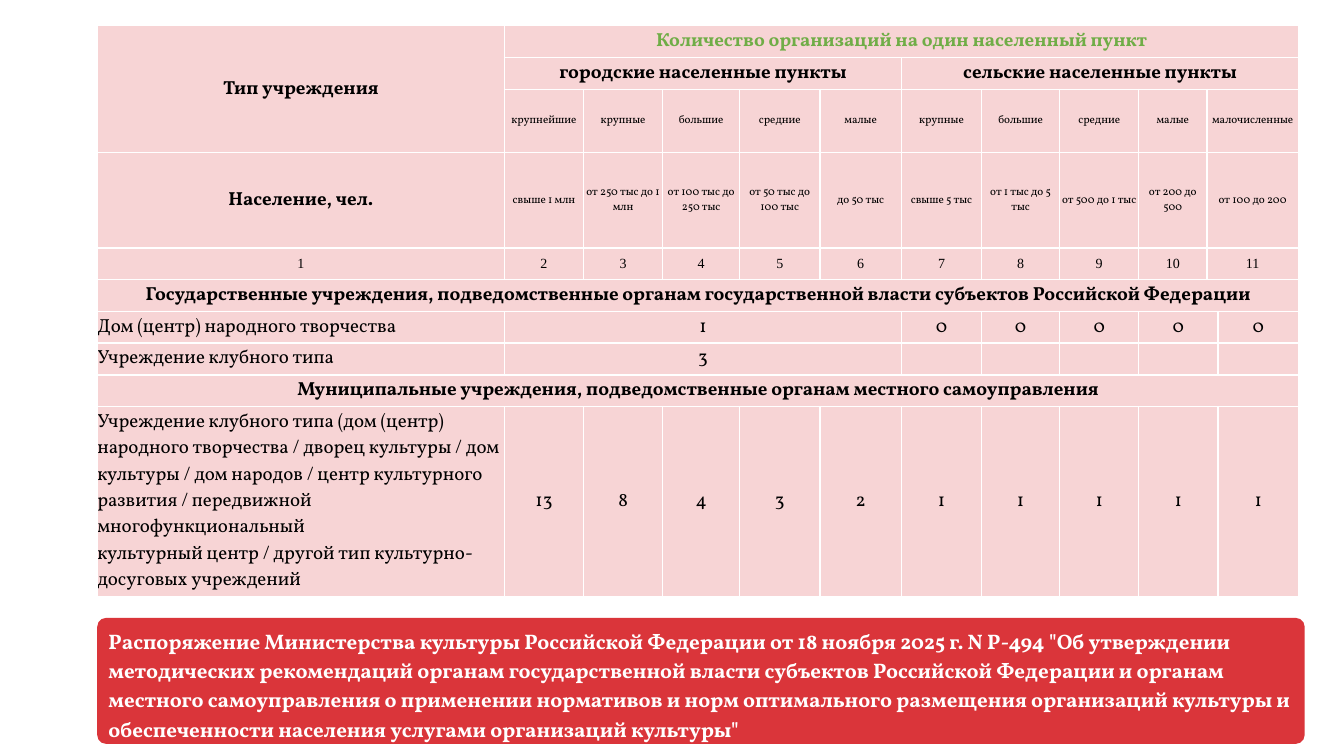
from collections import namedtuple

from lxml import etree
from pptx import Presentation
from pptx import util as u
from pptx.dml.color import RGBColor
from pptx.enum import shapes, text
from pptx.oxml import ns

PX = 9144
WHITE = RGBColor(0xFF, 0xFF, 0xFF)
BLACK = RGBColor(0x00, 0x00, 0x00)
PINK = RGBColor(0xF7, 0xD4, 0xD5)
RED = RGBColor(0xDA, 0x35, 0x3A)
GREEN = RGBColor(0x70, 0xAD, 0x47)
SERIF = "Vollkorn"

Style = namedtuple("Style", "size bold font color align")
CENTER, LEFT = text.PP_ALIGN.CENTER, text.PP_ALIGN.LEFT
HEADING = Style(27, True, SERIF, BLACK, CENTER)
ACCENT = HEADING._replace(color=GREEN)
SMALL = Style(16, False, SERIF, BLACK, CENTER)
NUMBER = Style(20, False, "Times New Roman", BLACK, CENTER)
VALUE = Style(27, False, SERIF, BLACK, CENTER)
LABEL = VALUE._replace(align=LEFT)
NOTE = Style(30, True, SERIF, WHITE, LEFT)

COLUMNS = [808, 157, 157, 153, 159, 162, 159, 155, 157, 135, 22, 160]
SINGLE = [1] * 10 + [2]
SPLIT = [1] * 9 + [2, 1]
GROUPED = [1, 5, 1, 1, 1, 2, 1]
Row = namedtuple("Row", "height lead style spans cells")
ROWS = [
    Row(63, HEADING, ACCENT, [1, 11],
        ["Тип учреждения", "Количество организаций на один населенный пункт"]),
    Row(63, HEADING, HEADING, [1, 5, 6],
        ["", "городские населенные пункты", "сельские населенные пункты"]),
    Row(126, HEADING, SMALL, SINGLE,
        ["", "крупнейшие", "крупные", "большие", "средние", "малые",
         "крупные", "большие", "средние", "малые", "малочисленные"]),
    Row(189, HEADING, SMALL, SINGLE,
        ["Население, чел.", "свыше 1 млн", "от 250 тыс до 1 млн",
         "от 100 тыс до 250 тыс", "от 50 тыс до 100 тыс", "до 50 тыс",
         "свыше 5 тыс", "от 1 тыс до 5 тыс", "от 500 до 1 тыс",
         "от 200 до 500", "от 100 до 200"]),
    Row(63, NUMBER, NUMBER, SINGLE, [str(number) for number in range(1, 12)]),
    Row(63, HEADING, HEADING, [12],
        ["Государственные учреждения, подведомственные органам "
         "государственной власти субъектов Российской Федерации"]),
    Row(63, LABEL, VALUE, GROUPED,
        ["Дом (центр) народного творчества", "1", "0", "0", "0", "0", "0"]),
    Row(63, LABEL, VALUE, GROUPED,
        ["Учреждение клубного типа", "3", "", "", "", "", ""]),
    Row(63, HEADING, HEADING, [12],
        ["Муниципальные учреждения, подведомственные органам местного "
         "самоуправления"]),
    Row(377, LABEL, VALUE, SPLIT,
        ["Учреждение клубного типа (дом (центр) народного творчества / дворец "
         "культуры / дом культуры / дом народов / центр культурного развития / "
         "передвижной многофункциональный\n"
         "культурный центр / другой тип культурно-досуговых учреждений",
         "13", "8", "4", "3", "2", "1", "1", "1", "1", "1"]),
]
DECREE = (
    "Распоряжение Министерства культуры Российской Федерации от 18 ноября "
    "2025 г. N Р-494 \"Об утверждении методических рекомендаций органам "
    "государственной власти субъектов Российской Федерации и органам местного "
    "самоуправления о применении нормативов и норм оптимального размещения "
    "организаций культуры и обеспеченности населения услугами организаций "
    "культуры\""
)


def write(frame, content, style):
    """Fill a text frame and format its paragraphs."""
    frame.text = content
    for paragraph in frame.paragraphs:
        paragraph.alignment = style.align
        font = paragraph.font
        font.size, font.bold, font.name = u.Pt(style.size), style.bold, style.font
        font.color.rgb = style.color


def set_borders(cell, color, width):
    """Draw the four borders of a cell."""
    properties = cell._tc.get_or_add_tcPr()
    for index, side in enumerate(("a:lnL", "a:lnR", "a:lnT", "a:lnB")):
        line = etree.Element(ns.qn(side), w=str(u.Pt(width)))
        fill = etree.SubElement(line, ns.qn("a:solidFill"))
        etree.SubElement(fill, ns.qn("a:srgbClr"), val=str(color))
        properties.insert(index, line)


def format_cell(cell):
    """Give a cell its fill, borders, margins and anchor."""
    cell.margin_left = cell.margin_right = cell.margin_top = cell.margin_bottom = 0
    cell.vertical_anchor = text.MSO_ANCHOR.MIDDLE
    cell.fill.solid()
    cell.fill.fore_color.rgb = PINK
    set_borders(cell, WHITE, 2.25)


def add_norms_table(slide, left, top):
    """Place the table of norms by settlement type."""
    heights = [row.height for row in ROWS]
    table = slide.shapes.add_table(
        len(ROWS), len(COLUMNS), left * PX, top * PX,
        sum(COLUMNS) * PX, sum(heights) * PX).table
    for column, width in zip(table.columns, COLUMNS):
        column.width = width * PX
    for table_row, height in zip(table.rows, heights):
        table_row.height = height * PX
    for cell in table.iter_cells():
        format_cell(cell)
    for y, row in enumerate(ROWS):
        x = 0
        for content, span in zip(row.cells, row.spans):
            cell = table.cell(y, x)
            write(cell.text_frame, content, row.style if x else row.lead)
            if span > 1:
                cell.merge(table.cell(y, x + span - 1))
            x += span
    table.cell(0, 0).merge(table.cell(2, 0))


def add_decree(slide, left, top, width, height):
    """Place the red panel that names the decree."""
    panel = slide.shapes.add_shape(
        shapes.MSO_SHAPE.ROUNDED_RECTANGLE,
        left * PX, top * PX, width * PX, height * PX)
    panel.adjustments[0] = 0.07
    panel.shadow.inherit = False
    panel.fill.solid()
    panel.fill.fore_color.rgb = RED
    panel.line.fill.background()
    frame = panel.text_frame
    frame.word_wrap = True
    frame.vertical_anchor = text.MSO_ANCHOR.TOP
    frame.margin_left = frame.margin_right = 17 * PX
    frame.margin_top = frame.margin_bottom = 8 * PX
    write(frame, DECREE, NOTE)
    frame.paragraphs[0].line_spacing = u.Pt(41.7)


def main():
    """Build the slide and save it."""
    presentation = Presentation()
    presentation.slide_width, presentation.slide_height = 2667 * PX, 1500 * PX
    slide = presentation.slides.add_slide(presentation.slide_layouts[6])
    add_decree(slide, 193, 1226, 2396, 250)
    add_norms_table(slide, 193, 51)
    presentation.save("out.pptx")


if __name__ == "__main__":
    main()
